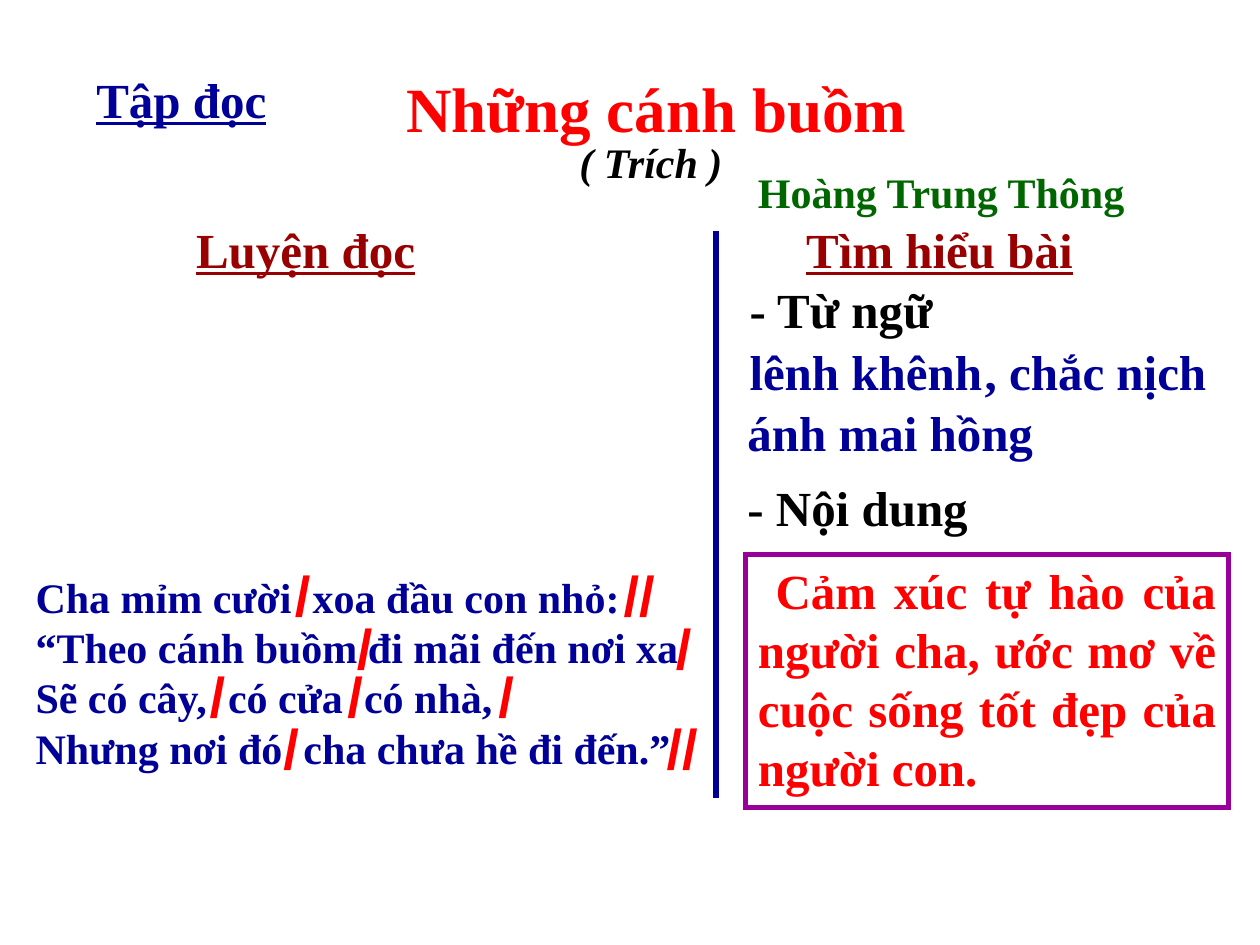
from dataclasses import dataclass

from lxml.etree import SubElement
from pptx import Presentation
from pptx.dml.color import RGBColor as RGB
from pptx.enum.shapes import MSO_CONNECTOR as CONN, MSO_SHAPE as SHAPE
from pptx.enum.text import MSO_ANCHOR as ANCHOR, MSO_AUTO_SIZE as FIT, PP_ALIGN as ALIGN
from pptx.oxml.ns import qn
from pptx.util import Inches, Pt


@dataclass(frozen=True)
class Theme:
    serif: str = "Times New Roman"
    sans: str = "Arial"
    title: int = 36
    mark: int = 32
    body: int = 28
    small: int = 24
    rule: int = 3
    black: str = "000000"
    blue: str = "000099"
    red: str = "FF0000"
    maroon: str = "990000"
    green: str = "006600"
    purple: str = "990099"


T = Theme()
COLS, ROWS = 120, 90  # twelve grid cells to the inch
LINE_H = 6.8          # rows taken by one line of body text


def cell(n):
    return Inches(n / 12)


def add_run(p, text, size, color, font=T.serif, underline=None, italic=None):
    r = p.add_run()
    r.text = text
    f = r.font
    f.name, f.size, f.bold = font, Pt(size), True
    f.underline, f.italic = underline, italic
    f.color.rgb = RGB.from_string(color)
    return r


def add_text(slide, box, text, size=T.body, color=T.blue, wrap=True, **style):
    sp = slide.shapes.add_textbox(*map(cell, box))
    tf = sp.text_frame
    tf.word_wrap = wrap
    add_run(tf.paragraphs[0], text, size, color, **style)


def add_title(slide, box, text):
    sp = slide.shapes.title
    sp.left, sp.top, sp.width, sp.height = map(cell, box)
    tf = sp.text_frame
    tf.auto_size, tf.vertical_anchor = FIT.NONE, ANCHOR.TOP
    p = tf.paragraphs[0]
    p.alignment = ALIGN.LEFT
    add_run(p, text, T.title, T.red)


def add_verse(slide, box, lines):
    """Each | becomes a space widened to leave room for a pause mark."""
    tf = slide.shapes.add_textbox(*map(cell, box)).text_frame
    tf.word_wrap = True
    for i, line in enumerate(lines):
        p = tf.add_paragraph() if i else tf.paragraphs[0]
        for j, part in enumerate(line.split("|")):
            if j:
                gap = add_run(p, " ", T.small, T.blue)
                gap._r.get_or_add_rPr().set("spc", str(T.small * 25))
            add_run(p, part, T.small, T.blue)


def add_divider(slide, x, top, bottom):
    line = slide.shapes.add_connector(CONN.STRAIGHT, *map(cell, (x, top, x, bottom)))
    line.line.color.rgb = RGB.from_string(T.blue)
    line.line.width = Pt(T.rule)
    SubElement(line._element.spPr, qn("a:effectLst"))


def add_framed_text(slide, box, text):
    sp = slide.shapes.add_shape(SHAPE.RECTANGLE, *map(cell, box))
    sp.shadow.inherit = False
    sp.fill.background()
    sp.line.color.rgb = RGB.from_string(T.purple)
    sp.line.width = Pt(T.rule)
    SubElement(sp.line._get_or_add_ln(), qn("a:miter"), lim="800000")
    tf = sp.text_frame
    tf.word_wrap, tf.vertical_anchor = True, ANCHOR.TOP
    p = tf.paragraphs[0]
    p.alignment = ALIGN.JUSTIFY
    p._p.get_or_add_pPr().set("indent", str(Inches(0.14)))
    add_run(p, text, T.body, T.red)


def main():
    prs = Presentation()
    prs.slide_width, prs.slide_height = cell(COLS), cell(ROWS)
    slide = prs.slides.add_slide(prs.slide_layouts[5])

    # Lesson heading
    add_text(slide, (8, 6, 20, LINE_H), "Tập đọc", underline=True)
    add_title(slide, (37.5, 6, 52.5, 8.4), "Những cánh buồm")
    add_text(slide, (54, 12.4, 22, 6), "( Trích )", T.small, T.black, italic=True)
    add_text(slide, (71, 15.3, 40, 6), "Hoàng Trung Thông", T.small, T.green)

    # Column headings and divider
    for x, heading in ((17.5, "Luyện đọc"), (75.6, "Tìm hiểu bài")):
        add_text(slide, (x, 20.3, 32, LINE_H), heading, color=T.maroon, underline=True)
    add_divider(slide, 68.2, 22, 76)

    # Reading practice: verse with pause marks
    add_verse(slide, (2.2, 53.8, 64, 20.4), (
        "Cha mỉm cười|xoa đầu con nhỏ:",
        "“Theo cánh buồm đi mãi đến nơi xa",
        "Sẽ có cây,|có cửa|có nhà,",
        "Nhưng nơi đó|cha chưa hề đi đến.”",
    ))
    marks = (
        (52.8, ((26.9, "/"), (58.2, "//"))),
        (57.8, ((32.8, "/"), (63.2, "/"))),
        (62.4, ((18.8, "/"), (31.9, "/"), (46.3, "/"))),
        (67.4, ((25.8, "/"), (62.3, "//"))),
    )
    for y, row in marks:
        for x, mark in row:
            add_text(slide, (x, y, 2.2 + 1.6 * len(mark), 7.6), mark,
                     T.mark, T.red, wrap=False, font=T.sans)

    # Comprehension: vocabulary and main idea
    for x, y, w, text, color in (
        (70.2, 26, 26, "- Từ ngữ", T.black),
        (70.2, 31.9, 28, "lênh khênh", T.blue),
        (92.6, 31.9, 26, ", chắc nịch", T.blue),
        (70, 37.7, 34, "ánh mai hồng", T.blue),
        (70, 44.9, 26, "- Nội dung", T.black),
    ):
        add_text(slide, (x, y, w, LINE_H), text, color=color)
    add_framed_text(slide, (71, 52.8, 46, 24.1),
                    "Cảm xúc tự hào của người cha, ước mơ về "
                    "cuộc sống tốt đẹp của người con.")

    prs.save("out.pptx")


if __name__ == "__main__":
    main()
